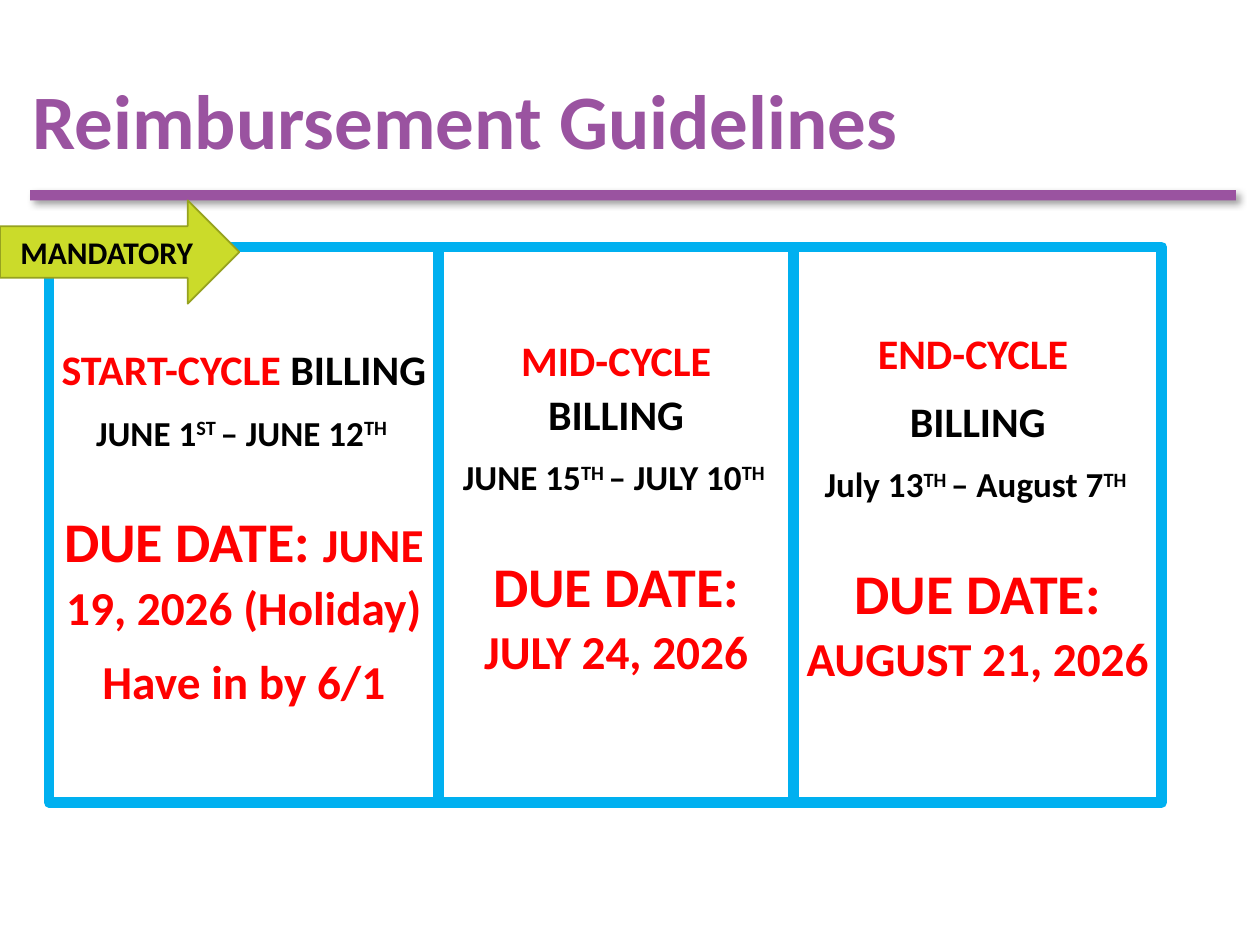
from lxml import etree
from pptx import Presentation, util as u
from pptx.dml.color import RGBColor
from pptx.enum import shapes, text
from pptx.oxml.ns import qn

PURPLE = RGBColor(0x9A, 0x53, 0xA0)
BLUE = RGBColor(0x00, 0xB0, 0xF0)
RED = RGBColor(0xFF, 0x00, 0x00)
BLACK = RGBColor(0x00, 0x00, 0x00)
LIME = RGBColor(0xCB, 0xDB, 0x2A)
OLIVE = RGBColor(0x96, 0xA2, 0x1F)


def add_text(para, words, size, color=BLACK, raised=False):
    span = para.add_run()
    span.text = words
    span.font.name = "Calibri"
    span.font.size = u.Pt(size)
    span.font.bold = True
    span.font.color.rgb = color
    if raised:
        span.font._element.set("baseline", "30000")


def add_box(page, kind, area, fill=None, line=None, width=1):
    box = page.shapes.add_shape(kind, *[u.Inches(side) for side in area])
    box.shadow.inherit = False
    if fill is None:
        box.fill.background()
    else:
        box.fill.solid()
        box.fill.fore_color.rgb = fill
    if line is None:
        box.line.fill.background()
    else:
        box.line.color.rgb = line
        box.line.width = u.Pt(width)
    return box


def add_shadow(box):
    effects = box._element.spPr.find(qn("a:effectLst"))
    shadow = etree.SubElement(effects, qn("a:outerShdw"), blurRad=str(u.Pt(4)),
                              dist=str(u.Pt(3)), dir=str(45 * 60000), rotWithShape="0")
    color = etree.SubElement(shadow, qn("a:srgbClr"), val="000000")
    etree.SubElement(color, qn("a:alpha"), val="40000")


def add_header(page, title_area, rule_area):
    rule = add_box(page, shapes.MSO_SHAPE.RECTANGLE, rule_area, fill=PURPLE)
    add_shadow(rule)
    title = page.shapes.add_textbox(*[u.Inches(side) for side in title_area])
    title.text_frame.word_wrap = False
    title.text_frame.auto_size = text.MSO_AUTO_SIZE.SHAPE_TO_FIT_TEXT
    add_text(title.text_frame.paragraphs[0], "Reimbursement Guidelines", 44, PURPLE)


def add_cycle(page, area, heading, dates, due, note=None):
    """One billing column: heading lines, date range, due date, optional note."""
    box = add_box(page, shapes.MSO_SHAPE.RECTANGLE, area, line=BLUE, width=6)
    frame = box.text_frame
    frame.word_wrap = True
    frame.vertical_anchor = text.MSO_ANCHOR.MIDDLE
    frame.margin_left = frame.margin_right = u.Inches(0.09)
    frame.margin_bottom = u.Inches(0.05 if note else 0.36)

    # Each line is a list of (words, size, colour, raised)
    lines = [[(words, 24, color) for words, color in line] for line in heading]
    start, start_mark, end, end_mark = dates
    lines.append([(start, 20), (start_mark + " ", 20, BLACK, True),
                  ("– " + end, 20), (end_mark + " ", 20, BLACK, True)])
    due_index = len(lines)
    lines.append([("DUE DATE: ", 32, RED), (due, 27, RED)])
    if note:
        lines.append([(note, 27, RED)])

    for index, line in enumerate(lines):
        para = frame.paragraphs[0] if index == 0 else frame.add_paragraph()
        para.alignment = text.PP_ALIGN.CENTER
        para.line_spacing = 1.07
        para.space_after = u.Pt(8)
        if index == due_index:
            para.space_before = u.Pt(20)
        for part in line:
            add_text(para, *part)


def add_cycles(page, left, top, height):
    # Right to left, so that each column overlaps the one after it
    cycles = [
        (3.09, [[("START-CYCLE", RED), (" BILLING", BLACK)]],
         ("JUNE 1", "ST", "JUNE 12", "TH"), "JUNE 19, 2026 (Holiday)", "Have in by 6/1"),
        (2.82, [[("MID-CYCLE", RED), (" BILLING", BLACK)]],
         ("JUNE 15", "TH", "JULY 10", "TH"), "JULY 24, 2026", None),
        (2.92, [[("END-CYCLE ", RED)], [("BILLING", BLACK)]],
         ("July 13", "TH", "August 7", "TH"), "AUGUST 21, 2026", None),
    ]
    right = left + sum(cycle[0] for cycle in cycles)
    for width, *content in reversed(cycles):
        right -= width
        add_cycle(page, (right, top, width, height), *content)


def add_flag(page, area):
    flag = add_box(page, shapes.MSO_SHAPE.RIGHT_ARROW, area, LIME, OLIVE)
    flag.text_frame.word_wrap = True
    flag.text_frame.vertical_anchor = text.MSO_ANCHOR.MIDDLE
    para = flag.text_frame.paragraphs[0]
    para.alignment = text.PP_ALIGN.CENTER
    add_text(para, "MANDATORY", 18)


def main():
    deck = Presentation()
    deck.slide_width, deck.slide_height = u.Inches(10), u.Inches(7.5)
    page = deck.slides.add_slide(deck.slide_layouts[6])
    add_header(page, (0.16, 0.53, 7.15, 0.84), (0.24, 1.51, 9.57, 0.08))
    add_cycles(page, left=0.39, top=1.96, height=4.41)
    add_flag(page, (0, 1.59, 1.9, 0.82))
    deck.save("out.pptx")


if __name__ == "__main__":
    main()
